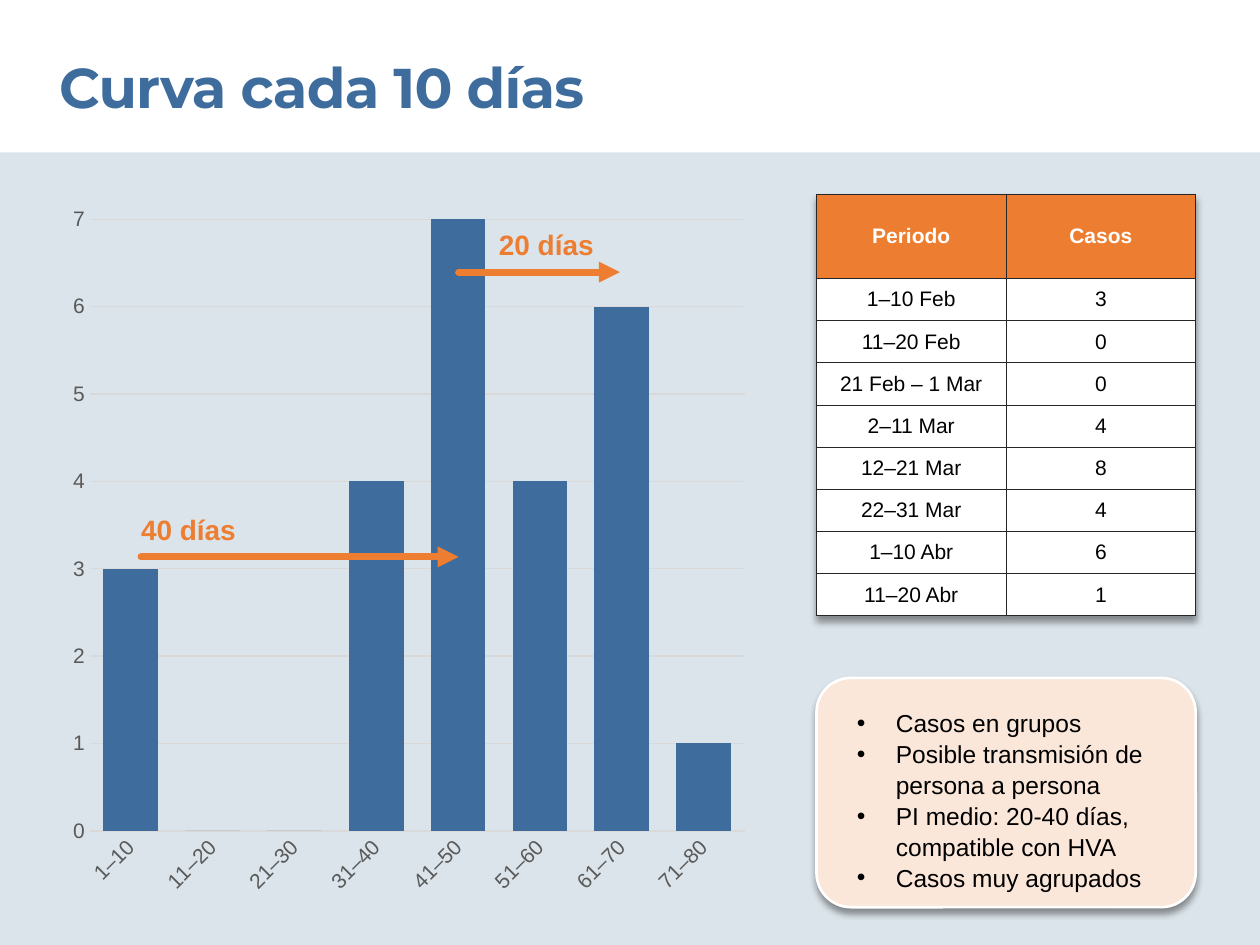
import pptx
import pptx.chart.data
import pptx.dml.color
import pptx.enum.chart
import pptx.enum.dml
import pptx.enum.shapes
import pptx.enum.text
import pptx.oxml
import pptx.oxml.ns
import pptx.util

Inches, Pt = pptx.util.Inches, pptx.util.Pt
BLUE, ORANGE, GRAY, GRID = "3D6C9D", "ED7D31", "595959", "D9D9D9"
WHITE, BLACK = "FFFFFF", "000000"
LEFT, RIGHT_COLUMN, COLUMN_WIDTH = 0.47, 6.48, 3.01
TOP, BOTTOM = 1.54, 7.2

DAYS = ["1–10", "11–20", "21–30", "31–40", "41–50", "51–60", "61–70", "71–80"]
DAY_CASES = [3, 0, 0, 4, 7, 4, 6, 1]
PERIODS = [
    ("Periodo", "Casos"),
    ("1–10 Feb", "3"),
    ("11–20 Feb", "0"),
    ("21 Feb – 1 Mar", "0"),
    ("2–11 Mar", "4"),
    ("12–21 Mar", "8"),
    ("22–31 Mar", "4"),
    ("1–10 Abr", "6"),
    ("11–20 Abr", "1"),
]
FINDINGS = [
    "Casos en grupos",
    "Posible transmisión de persona a persona",
    "PI medio: 20-40 días, compatible con HVA",
    "Casos muy agrupados",
]


def rgb(code):
    return pptx.dml.color.RGBColor.from_string(code)


def xml(tag, content="", **attributes):
    listed = "".join(f' {name}="{value}"' for name, value in attributes.items())
    return pptx.oxml.parse_xml(
        f"<a:{tag} {pptx.oxml.ns.nsdecls('a')}{listed}>{content}</a:{tag}>")


def soft_shadow():
    return xml("outerShdw", f'<a:srgbClr val="{BLACK}"><a:alpha val="40000"/></a:srgbClr>',
               blurRad=Pt(4), dist=Pt(3), dir=5400000, algn="t", rotWithShape=0)


def style_font(font, size, color, bold=False, name="Arial"):
    font.name, font.size, font.bold = name, Pt(size), bold
    font.color.rgb = rgb(color)


def add_run(paragraph, text, *style, **options):
    run = paragraph.add_run()
    run.text = text
    style_font(run.font, *style, **options)
    return run


def place(shape, left, top, width, height):
    shape.left, shape.top = Inches(left), Inches(top)
    shape.width, shape.height = Inches(width), Inches(height)


def prepare_frame(frame):
    frame.margin_left = frame.margin_right = frame.margin_top = frame.margin_bottom = 0
    frame.word_wrap = True
    frame.auto_size = pptx.enum.text.MSO_AUTO_SIZE.SHAPE_TO_FIT_TEXT
    frame.vertical_anchor = pptx.enum.text.MSO_ANCHOR.TOP


def add_panel(slide, kind, box, fill):
    panel = slide.shapes.add_shape(kind, *map(Inches, box))
    panel.shadow.inherit = False
    panel.fill.solid()
    panel.fill.fore_color.rgb = rgb(fill)
    panel.line.fill.background()
    return panel


def add_card(slide):
    card = add_panel(slide, pptx.enum.shapes.MSO_SHAPE.ROUNDED_RECTANGLE,
                     (RIGHT_COLUMN, 5.38, COLUMN_WIDTH, BOTTOM - 5.38), "FBE7DA")
    card.adjustments[0] = 0.15
    card.line.color.rgb = rgb(WHITE)
    card.line.width = Pt(1.5)
    card.element.spPr.find(pptx.oxml.ns.qn("a:effectLst")).append(soft_shadow())


def fill_title(title):
    place(title, LEFT, 0.42, 8.55, 0.54)
    prepare_frame(title.text_frame)
    paragraph = title.text_frame.paragraphs[0]
    paragraph.alignment = pptx.enum.text.PP_ALIGN.LEFT
    run = add_run(paragraph, "Curva cada 10 días", 32, BLUE, True, name="Montserrat")
    run.font._element.set("spc", "-50")


def fill_findings(body):
    """Write the bulleted list and bring it in front of the card."""
    body.element.getparent().append(body.element)
    place(body, 6.8, 5.61, 2.3, 1.41)
    frame = body.text_frame
    prepare_frame(frame)
    for index, finding in enumerate(FINDINGS):
        paragraph = frame.add_paragraph() if index else frame.paragraphs[0]
        paragraph.space_before = Pt(0)
        paragraph.line_spacing = 1.05
        properties = paragraph._p.get_or_add_pPr()
        properties.set("marL", str(Inches(0.31)))
        properties.set("indent", str(-Inches(0.31)))
        properties.append(xml("buClr", f'<a:srgbClr val="{BLACK}"/>'))
        properties.append(xml("buFont", typeface="Arial"))
        properties.append(xml("buChar", char="•"))
        add_run(paragraph, finding, 14, BLACK)


def fill_cell(cell, text, fill, color, bold):
    cell.fill.solid()
    cell.fill.fore_color.rgb = rgb(fill)
    cell.vertical_anchor = pptx.enum.text.MSO_ANCHOR.MIDDLE
    cell.margin_left = cell.margin_right = Inches(0.08)
    cell.margin_top = cell.margin_bottom = Inches(0.05)
    paragraph = cell.text_frame.paragraphs[0]
    paragraph.alignment = pptx.enum.text.PP_ALIGN.CENTER
    add_run(paragraph, text, 12, color, bold)
    border = '<a:solidFill><a:srgbClr val="262626"/></a:solidFill>'
    for position, side in enumerate(("lnL", "lnR", "lnT", "lnB")):
        cell._tc.get_or_add_tcPr().insert(position, xml(side, border, w=Pt(0.5)))


def add_period_table(slide):
    height = 3.35
    table = slide.shapes.add_table(len(PERIODS), 2, Inches(RIGHT_COLUMN), Inches(TOP),
                                   Inches(COLUMN_WIDTH), Inches(height)).table
    shadow = xml("effectLst")
    shadow.append(soft_shadow())
    table._tbl.tblPr.insert(0, shadow)
    unit = height / (len(PERIODS) + 1)  # the header is two units high
    for index, values in enumerate(PERIODS):
        header = index == 0
        table.rows[index].height = Inches(unit * (2 if header else 1))
        look = (ORANGE, WHITE, True) if header else (WHITE, BLACK, False)
        for column, value in enumerate(values):
            fill_cell(table.cell(index, column), value, *look)


def style_axis(axis):
    axis.major_tick_mark = axis.minor_tick_mark = pptx.enum.chart.XL_TICK_MARK.NONE
    style_font(axis.tick_labels.font, 12, GRAY)


def add_case_chart(slide):
    data = pptx.chart.data.CategoryChartData()
    data.categories = DAYS
    data.add_series("Casos", DAY_CASES)
    chart = slide.shapes.add_chart(
        pptx.enum.chart.XL_CHART_TYPE.COLUMN_CLUSTERED,
        Inches(LEFT), Inches(TOP), Inches(5.55), Inches(BOTTOM - TOP), data).chart
    chart.has_legend = chart.has_title = False
    style_font(chart.font, 10, BLACK)
    plot = chart.plots[0]
    plot.gap_width, plot.vary_by_categories = 50, False
    bars = plot.series[0].format.fill
    bars.solid()
    bars.fore_color.rgb = rgb(BLUE)
    days, cases = chart.category_axis, chart.value_axis
    style_axis(days)
    style_axis(cases)
    days._element.txPr.bodyPr.set("rot", str(-45 * 60000))
    cases.minimum_scale, cases.maximum_scale, cases.major_unit = 0, 7, 1
    cases.format.line.fill.background()
    for line in (days.format.line, cases.major_gridlines.format.line):
        line.color.rgb = rgb(GRID)
        line.width = Pt(0.75)


def add_interval(slide, text, start, end, y, label_left):
    """Draw an arrow between two peaks with its length written above."""
    arrow = slide.shapes.add_connector(pptx.enum.shapes.MSO_CONNECTOR.STRAIGHT,
                                       *map(Inches, (start, y, end, y)))
    arrow.line.color.rgb = rgb(ORANGE)
    arrow.line.width = Pt(4)
    stroke = arrow.line._get_or_add_ln()
    stroke.set("cap", "rnd")
    stroke.append(xml("tailEnd", type="triangle"))
    arrow.element.spPr.append(xml("effectLst"))
    label = slide.shapes.add_textbox(*map(Inches, (label_left, y - 0.35, 1.58, 0.27)))
    prepare_frame(label.text_frame)
    add_run(label.text_frame.paragraphs[0], text, 16, ORANGE, True)


def main():
    deck = pptx.Presentation()
    deck.slide_width, deck.slide_height = Inches(10), Inches(7.5)
    slide = deck.slides.add_slide(deck.slide_layouts[1])
    add_panel(slide, pptx.enum.shapes.MSO_SHAPE.RECTANGLE, (0, 1.21, 10, 6.29), "DBE4EA")
    add_card(slide)
    fill_title(slide.shapes.title)
    add_period_table(slide)
    add_case_chart(slide)
    add_interval(slide, "40 días", 1.12, 3.64, 4.42, 1.12)
    add_interval(slide, "20 días", 3.64, 4.92, 2.16, 3.96)
    fill_findings(slide.placeholders[1])
    deck.save("out.pptx")


if __name__ == "__main__":
    main()
